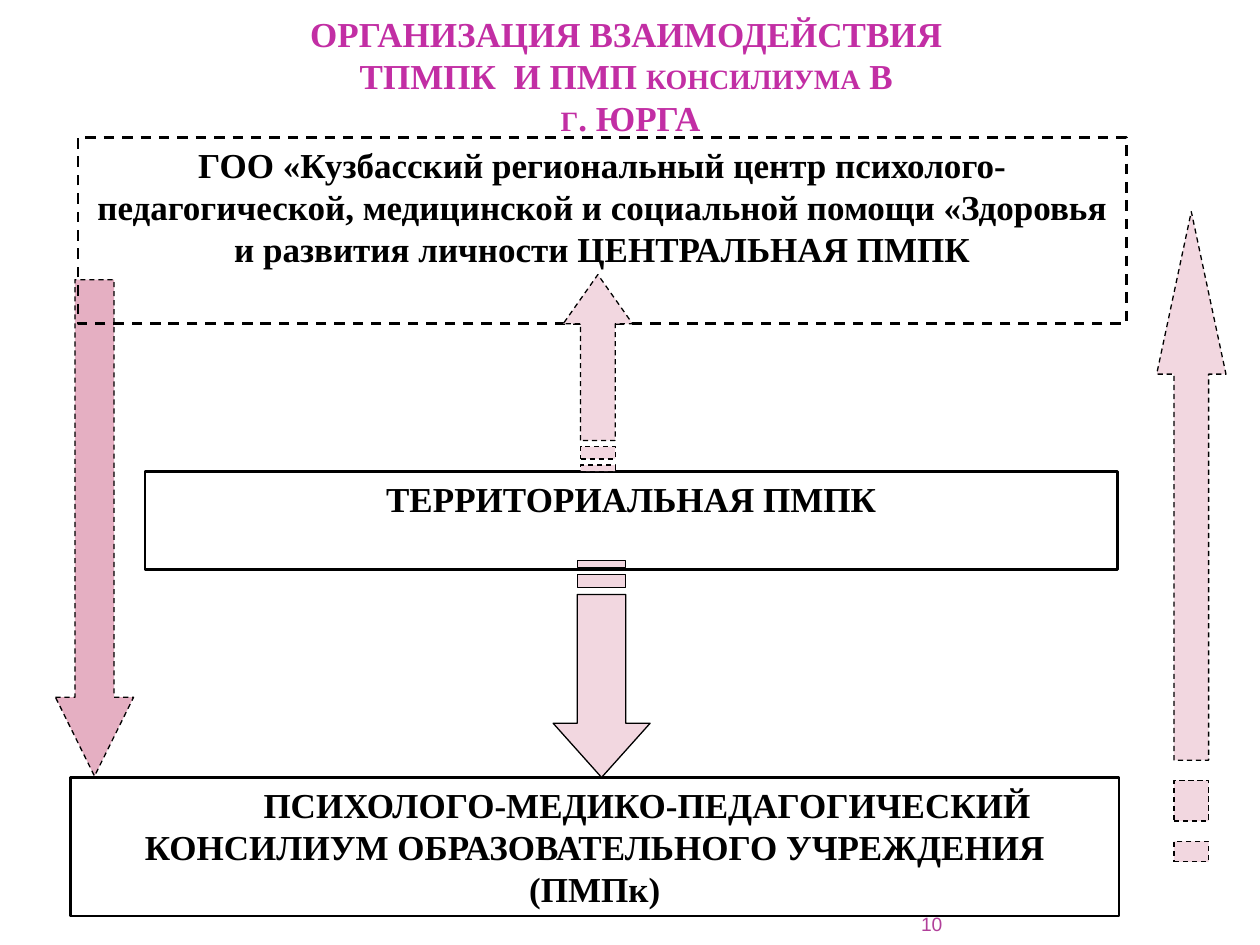
from pptx import Presentation
from pptx.dml.color import RGBColor
from pptx.enum.dml import MSO_LINE
from pptx.enum.shapes import MSO_SHAPE
from pptx.enum.text import MSO_ANCHOR, PP_ALIGN
from pptx.util import Inches, Pt

RECT, DOWN_ARROW = MSO_SHAPE.RECTANGLE, MSO_SHAPE.DOWN_ARROW
DASH = MSO_LINE.DASH
TOP, BOTTOM = MSO_ANCHOR.TOP, MSO_ANCHOR.BOTTOM
CENTER, RIGHT = PP_ALIGN.CENTER, PP_ALIGN.RIGHT
SERIF, SANS = "Times New Roman", "Arial"

COLORS = {
    "title": "C22EA4",
    "number": "B13F9A",
    "ink": "000000",
    "arrow": "F2D7E0",
    "long_arrow": "E5AFC2",
}


def rgb(name):
    return RGBColor.from_string(COLORS[name])


def style_shape(sp, fill=None, width=0.75, dash=None):
    sp.shadow.inherit = False
    if fill:
        sp.fill.solid()
        sp.fill.fore_color.rgb = rgb(fill)
    else:
        sp.fill.background()
    sp.line.color.rgb = rgb("ink")
    sp.line.width = Pt(width)
    if dash:
        sp.line.dash_style = dash


def add_run(p, text, size, color="ink", font=SERIF, bold=True):
    r = p.add_run()
    r.text = text
    r.font.name, r.font.size, r.font.bold = font, Pt(size), bold
    r.font.color.rgb = rgb(color)


def add_label(s, left, top, width, height, align, margin):
    """Bottom-anchored text box; returns its first paragraph."""
    sp = s.shapes.add_textbox(*map(Inches, (left, top, width, height)))
    tf = sp.text_frame
    tf.word_wrap = True
    tf.vertical_anchor = BOTTOM
    tf.margin_left = tf.margin_right = Inches(margin)
    tf.margin_top = tf.margin_bottom = 0
    p = tf.paragraphs[0]
    p.alignment = align
    return p


def add_title(s, left, top, width, height):
    p = add_label(s, left, top, width, height, CENTER, 0.05)
    lines = [
        [("ОРГАНИЗАЦИЯ ВЗАИМОДЕЙСТВИЯ ", 20)],
        [("ТПМПК  И ПМП ", 20), ("КОНСИЛИУМА", 16), (" В ", 20)],
        [("Г", 16), (". ЮРГА", 20)],
    ]
    for i, line in enumerate(lines):
        if i:
            p.add_line_break()
        for text, size in line:
            add_run(p, text, size, "title")


def add_level(s, left, top, width, height, text, dash=None, indent=0):
    """Outlined box for one level of the commission hierarchy."""
    sp = s.shapes.add_shape(RECT, *map(Inches, (left, top, width, height)))
    style_shape(sp, width=1.5, dash=dash)
    tf = sp.text_frame
    tf.word_wrap = True
    tf.vertical_anchor = TOP
    p = tf.paragraphs[0]
    p.alignment = CENTER
    if indent:
        p._p.get_or_add_pPr().set("indent", str(Inches(indent)))
    add_run(p, text, 20)


def add_long_arrow(s, left, top, width, height):
    sp = s.shapes.add_shape(DOWN_ARROW, *map(Inches, (left, top, width, height)))
    sp.adjustments[0], sp.adjustments[1] = 0.5, 1.01
    style_shape(sp, "long_arrow", dash=DASH)


def add_striped_arrow(s, left, top, width, height, up=False, dash=None):
    """Vertical arrow with two tail stripes, all in fractions of its box."""
    def bar(start, end):
        return [(0.25, start), (0.75, start), (0.75, end), (0.25, end)]

    head = [(0.25, 5 / 32), (0.25, 0.75), (0, 0.75), (0.5, 1),
            (1, 0.75), (0.75, 0.75), (0.75, 5 / 32)]
    outlines = [
        [(Inches(left + x * width),
          Inches(top + (1 - y if up else y) * height)) for x, y in outline]
        for outline in (head, bar(1 / 16, 1 / 8), bar(0, 1 / 32))
    ]
    fb = s.shapes.build_freeform(*outlines[0][0])
    for i, points in enumerate(outlines):
        if i:
            fb.move_to(*points[0])
        fb.add_line_segments(points[1:], close=True)
    style_shape(fb.convert_to_shape(), "arrow", dash=dash)


def main():
    prs = Presentation()
    prs.slide_width, prs.slide_height = Inches(10), Inches(7.5)
    s = prs.slides.add_slide(prs.slide_layouts[6])

    # Arrow behind the boxes, then title and page number
    add_long_arrow(s, 0.44, 2.22, 0.62, 3.94)
    add_title(s, 0.16, 0.08, 9.69, 1.02)
    p = add_label(s, 6.84, 7.17, 0.64, 0.25, RIGHT, 0)
    add_run(p, "10", 11, "number", SANS, False)

    # Three levels, from regional to school
    add_level(s, 0.62, 1.09, 8.32, 1.48,
              "ГОО «Кузбасский региональный центр психолого-педагогической, "
              "медицинской и социальной помощи «Здоровья и развития личности "
              "ЦЕНТРАЛЬНАЯ ПМПК", dash=DASH)
    add_level(s, 1.15, 3.74, 7.72, 0.78, "ТЕРРИТОРИАЛЬНАЯ ПМПК")
    add_level(s, 0.56, 6.17, 8.32, 1.1,
              "ПСИХОЛОГО-МЕДИКО-ПЕДАГОГИЧЕСКИЙ КОНСИЛИУМ "
              "ОБРАЗОВАТЕЛЬНОГО УЧРЕЖДЕНИЯ (ПМПк)", indent=0.83)

    # Links between levels
    add_striped_arrow(s, 4.39, 4.45, 0.77, 1.72)
    add_striped_arrow(s, 9.18, 1.68, 0.55, 5.16, up=True, dash=DASH)
    add_striped_arrow(s, 4.47, 2.18, 0.55, 1.56, up=True, dash=DASH)

    prs.save("out.pptx")


if __name__ == "__main__":
    main()
